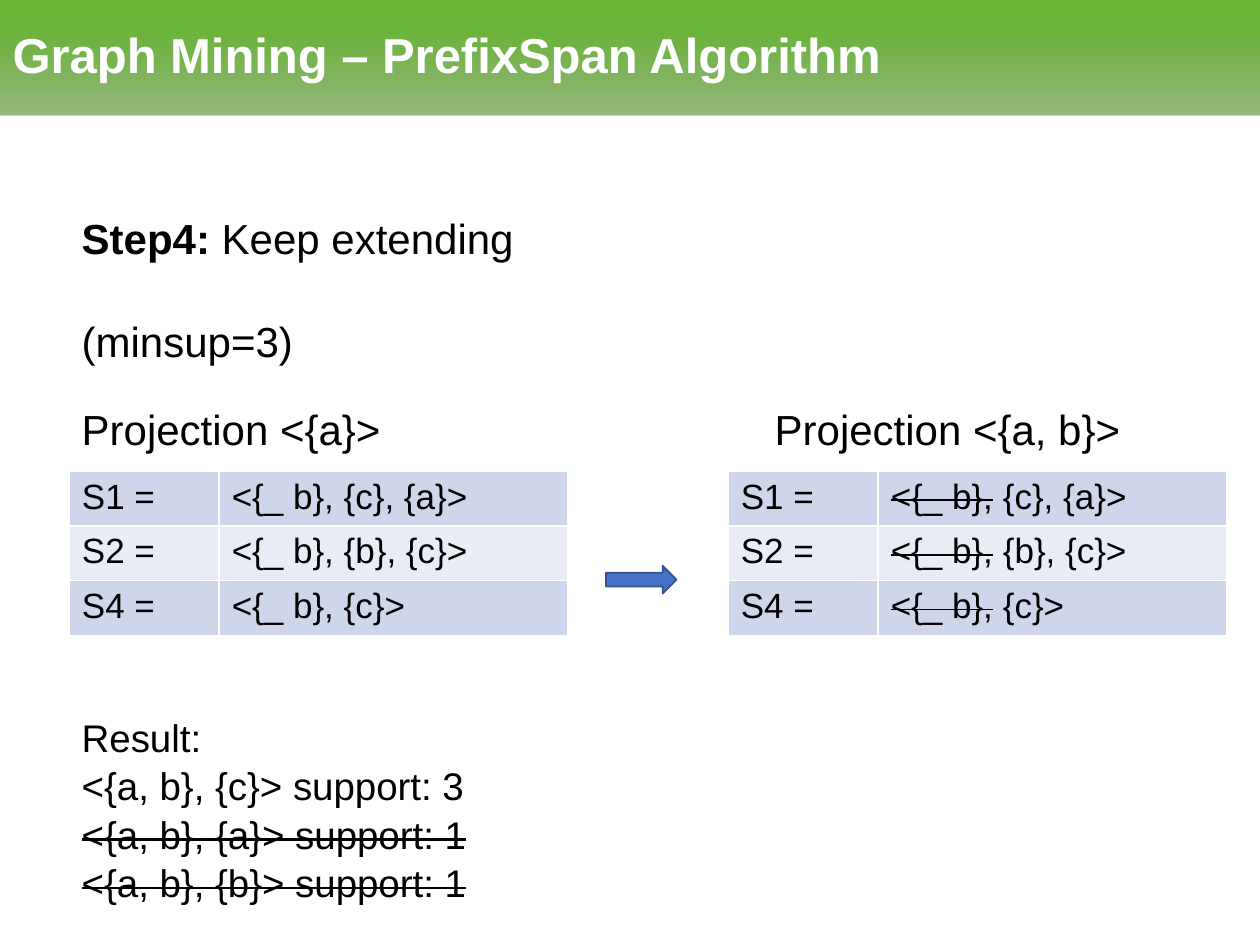
"""Build the slide on extending prefixes with the PrefixSpan algorithm."""
from typing import NamedTuple

from lxml import etree
from pptx import Presentation
from pptx import util as u
from pptx.dml.color import RGBColor
from pptx.enum import shapes, text
from pptx.oxml.ns import qn

COLORS = {
    "white": "FFFFFF", "black": "000000",
    "green_dark": "518D2A", "green": "6AB636", "green_light": "6ABA34",
    "band_dark": "CFD5EA", "band_light": "E9EBF5",
    "arrow": "4472C4", "arrow_line": "325491",
}


class Span(NamedTuple):
    text: str
    bold: bool = False
    strike: bool = False


class TextBlock(NamedTuple):
    top: float
    height: float
    size: float
    lines: list[list[Span]]
    gap: float = 0
    spacing: float = 1.0
    tab: float | None = None


class Projection(NamedTuple):
    left: float
    rows: list[tuple[str, list[Span]]]


BLOCKS = [
    TextBlock(1.64, 1.45, 24,
              [[Span("Step4: ", bold=True), Span("Keep extending")], [Span("(minsup=3)")]], gap=30),
    TextBlock(3.15, 0.5, 24, [[Span("Projection <{a}>\tProjection <{a, b}>")]], tab=5.5),
    TextBlock(5.6, 1.6, 22,
              [[Span("Result:")],
               [Span("<{a, b}, {c}> support: 3")],
               [Span("<{a, b}, {a}> support: 1", strike=True)],
               [Span("<{a, b}, {b}> support: 1", strike=True)]], spacing=1.05),
]

SUFFIXES = {"S1 =": " {c}, {a}>", "S2 =": " {b}, {c}>", "S4 =": " {c}>"}
PREFIX = "<{_ b},"
PROJECTIONS = [
    Projection(0.55, [(name, [Span(PREFIX + rest)]) for name, rest in SUFFIXES.items()]),
    Projection(5.78, [(name, [Span(PREFIX, strike=True), Span(rest)])
                      for name, rest in SUFFIXES.items()]),
]


def color(name: str) -> RGBColor:
    return RGBColor.from_string(COLORS[name])


def write(frame, lines: list[list[Span]], *, size: float, ink: str = "black",
          gap: float = 0, spacing: float = 1.0, tab: float | None = None) -> None:
    frame.word_wrap = True
    for index, line in enumerate(lines):
        para = frame.add_paragraph() if index else frame.paragraphs[0]
        para.alignment = text.PP_ALIGN.LEFT
        para.line_spacing = spacing
        para.space_before = u.Pt(gap if index else 0)
        if tab is not None:
            stops = etree.SubElement(para._p.get_or_add_pPr(), qn("a:tabLst"))
            etree.SubElement(stops, qn("a:tab"), pos=str(u.Inches(tab)), algn="l")
        for part in line:
            span = para.add_run()
            span.text = part.text
            span.font.name = "Arial"
            span.font.size = u.Pt(size)
            span.font.bold = part.bold
            span.font.color.rgb = color(ink)
            if part.strike:
                span._r.get_or_add_rPr().set("strike", "sngStrike")


def draw_title(page, wording: str) -> None:
    title = page.shapes.title
    title.left, title.top = u.Inches(0), u.Inches(0)
    title.width, title.height = u.Inches(10), u.Inches(0.92)
    title.fill.gradient()
    title.fill.gradient_angle = 90
    stops = next(title.element.iter(qn("a:gsLst")))
    for stop in list(stops):
        stops.remove(stop)
    for position, name, alpha in ((0, "green_dark", 60), (80, "green", 100),
                                  (100, "green_light", 100)):
        stop = etree.SubElement(stops, qn("a:gs"), pos=str(position * 1000))
        shade = etree.SubElement(stop, qn("a:srgbClr"), val=COLORS[name])
        if alpha < 100:
            etree.SubElement(shade, qn("a:alpha"), val=str(alpha * 1000))
    title.text_frame.vertical_anchor = text.MSO_ANCHOR.MIDDLE
    write(title.text_frame, [[Span(wording, bold=True)]], size=28, ink="white", spacing=0.9)


def draw_block(page, block: TextBlock) -> None:
    box = page.shapes.add_textbox(u.Inches(0.55), u.Inches(block.top),
                                  u.Inches(9.19), u.Inches(block.height))
    write(box.text_frame, block.lines, size=block.size, gap=block.gap,
          spacing=block.spacing, tab=block.tab)


def draw_projection(page, projection: Projection) -> None:
    table = page.shapes.add_table(len(projection.rows), 2, u.Inches(projection.left),
                                  u.Inches(3.74), u.Inches(3.96), u.Inches(1.3)).table
    table.first_row = False
    for column, width in zip(table.columns, (1.19, 2.77)):
        column.width = u.Inches(width)
    for index, (name, sequence) in enumerate(projection.rows):
        for cell, line in zip(table.rows[index].cells, ([Span(name)], sequence)):
            cell.fill.solid()
            cell.fill.fore_color.rgb = color("band_light" if index % 2 else "band_dark")
            write(cell.text_frame, [line], size=20)


def draw_arrow(page) -> None:
    arrow = page.shapes.add_shape(shapes.MSO_SHAPE.RIGHT_ARROW, u.Inches(4.81), u.Inches(4.49),
                                  u.Inches(0.56), u.Inches(0.22))
    arrow.shadow.inherit = False
    arrow.fill.solid()
    arrow.fill.fore_color.rgb = color("arrow")
    arrow.line.color.rgb = color("arrow_line")
    arrow.line.width = u.Pt(1)


def main() -> None:
    deck = Presentation()
    deck.slide_width, deck.slide_height = u.Inches(10), u.Inches(7.5)
    page = deck.slides.add_slide(deck.slide_layouts[5])
    draw_title(page, "Graph Mining – PrefixSpan Algorithm")
    for block in BLOCKS:
        draw_block(page, block)
    for projection in PROJECTIONS:
        draw_projection(page, projection)
    draw_arrow(page)
    deck.save("out.pptx")


if __name__ == "__main__":
    main()
